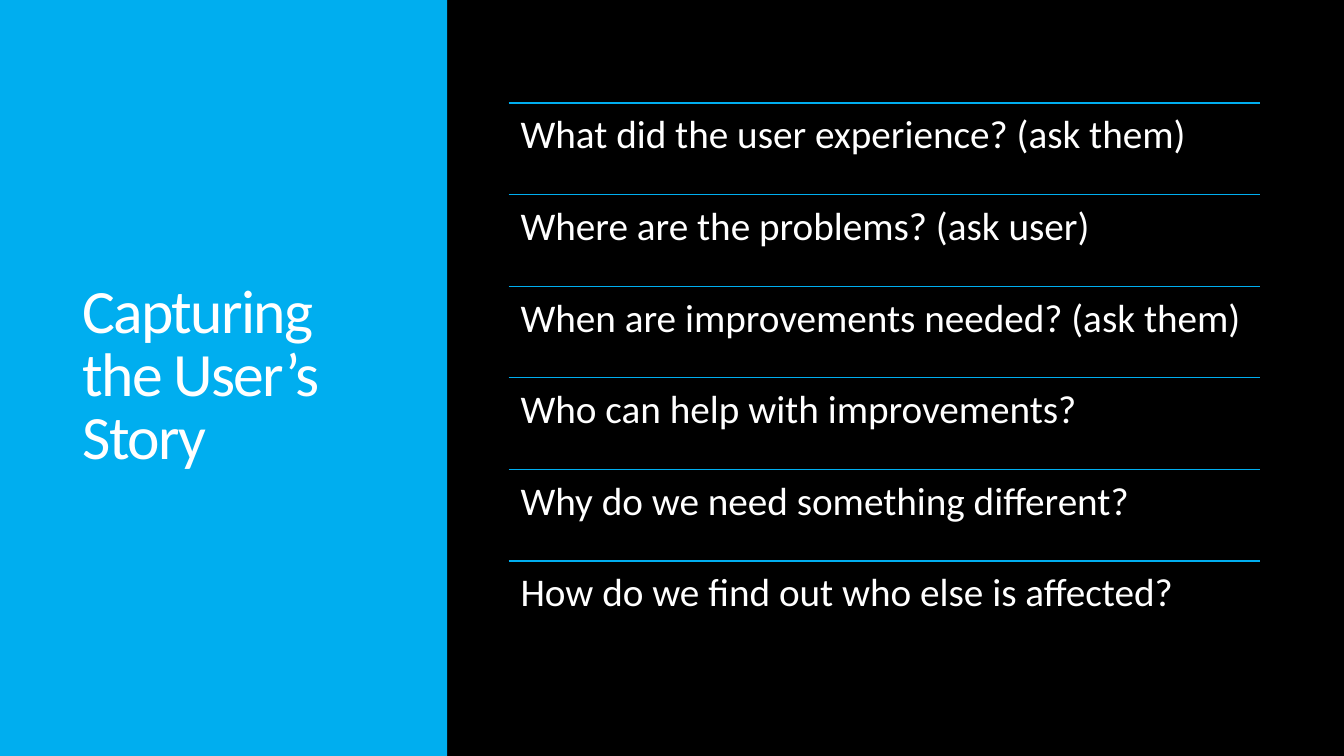
from dataclasses import dataclass

from lxml.etree import SubElement
from pptx import Presentation
from pptx.dml.color import RGBColor
from pptx.enum.shapes import MSO_CONNECTOR, MSO_SHAPE
from pptx.enum.text import MSO_ANCHOR
from pptx.oxml.ns import qn
from pptx.util import Cm, Pt


@dataclass(frozen=True)
class Theme:
    background: RGBColor = RGBColor(0x00, 0x00, 0x00)
    accent: RGBColor = RGBColor(0x00, 0xAE, 0xEF)
    text: RGBColor = RGBColor(0xFF, 0xFF, 0xFF)
    font: str = "Calibri"
    title_size: Pt = Pt(44)
    question_size: Pt = Pt(28)
    rule_width: Pt = Pt(1)


theme = Theme()


def add_text(page, left, top, width, height, text, size, line_spacing):
    box = page.shapes.add_textbox(left, top, width, height)
    box.text_frame.word_wrap = True
    para = box.text_frame.paragraphs[0]
    para.line_spacing = line_spacing
    span = para.add_run()
    span.text = text
    span.font.name = theme.font
    span.font.size = size
    span.font.color.rgb = theme.text
    return box.text_frame, span


# Deck and page
deck = Presentation()
deck.slide_width, deck.slide_height = Cm(33.87), Cm(19.05)
page = deck.slides.add_slide(deck.slide_layouts[6])
page.background.fill.solid()
page.background.fill.fore_color.rgb = theme.background

# Side panel
panel = page.shapes.add_shape(MSO_SHAPE.RECTANGLE, 0, 0, Cm(11.27), deck.slide_height)
panel.shadow.inherit = False
panel.fill.solid()
panel.fill.fore_color.rgb = theme.accent
panel.line.fill.background()

# Title with slightly tightened letters
frame, span = add_text(page, Cm(1.83), Cm(2.6), Cm(8.3), Cm(13.84),
                       "Capturing the User’s Story", theme.title_size, 0.85)
frame.vertical_anchor = MSO_ANCHOR.MIDDLE
span.font._element.set("spc", "-120")

# Questions, each under a thin rule
questions = [
    "What did the user experience? (ask them)",
    "Where are the problems? (ask user)",
    "When are improvements needed? (ask them)",
    "Who can help with improvements?",
    "Why do we need something different?",
    "How do we find out who else is affected?",
]
list_left, list_top, list_width = Cm(12.82), Cm(2.6), Cm(18.93)
row_height = Cm(13.84) // len(questions)
inset = Cm(0.3)

for row, question in enumerate(questions):
    top = list_top + row * row_height
    rule = page.shapes.add_connector(MSO_CONNECTOR.STRAIGHT, list_left, top,
                                     list_left + list_width, top)
    rule.line.color.rgb = theme.accent
    rule.line.width = theme.rule_width
    SubElement(rule._element.spPr, qn("a:effectLst"))

    frame, span = add_text(page, list_left, top, list_width, row_height,
                           question, theme.question_size, 0.9)
    frame.margin_left = frame.margin_right = inset
    frame.margin_top = frame.margin_bottom = inset

deck.save("out.pptx")
